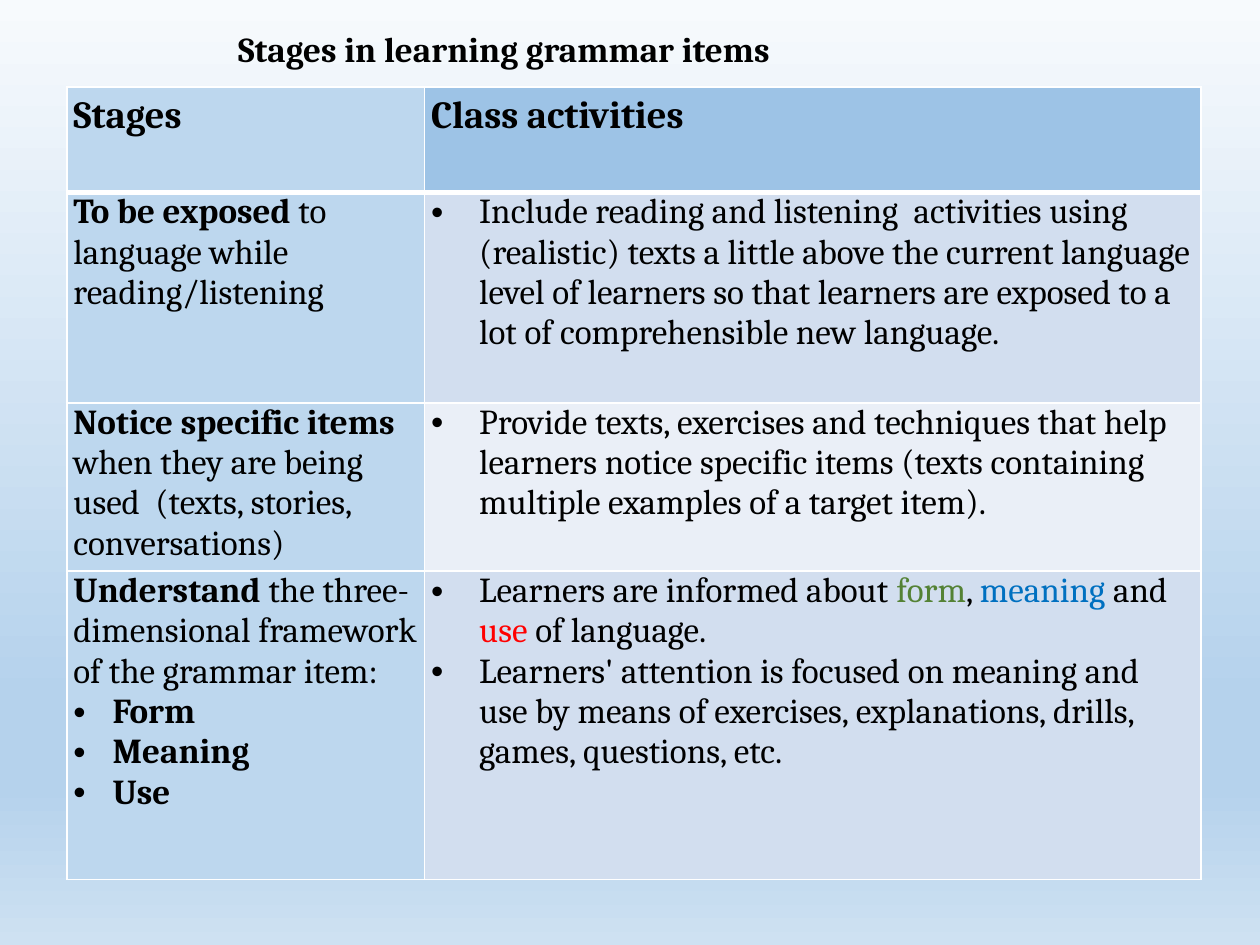
import copy
from dataclasses import dataclass

import lxml.etree
import pptx
import pptx.dml.color
import pptx.enum.text
import pptx.oxml.ns
import pptx.util

Cm = pptx.util.Cm
qn = pptx.oxml.ns.qn

COLORS = {
    "text": "000000",
    "border": "FFFFFF",
    "stage": "BDD7EE",
    "activity_header": "9DC3E6",
    "band_dark": "D2DEEF",
    "band_light": "EAEFF7",
    "form": "548235",
    "meaning": "0070C0",
    "use": "FF0000",
}
BACKGROUND_STOPS = [(0, "F7FAFD"), (74, "B5D2EC"), (83, "B5D2EC"), (100, "CEE1F2")]
CELL_FORMAT = {
    "margin_left": Cm(0.13),
    "margin_right": Cm(0.13),
    "margin_top": 0,
    "margin_bottom": 0,
}
COLUMN_WIDTHS = [7.21, 15.65]
ROW_HEIGHTS = [2.13, 4.24, 3.38, 6.22]


@dataclass
class Run:
    text: str
    bold: bool = False
    color: str = "text"


@dataclass
class Paragraph:
    runs: list[Run]
    indent: float = 0
    size: int = 20
    line_spacing: float = 1.0


@dataclass
class Entry:
    fill: str
    paragraphs: list[Paragraph]


def heading(text: str) -> Paragraph:
    return Paragraph([Run(text, True)], size=22, line_spacing=1.15)


def stage(name: str, description: str) -> Paragraph:
    return Paragraph([Run(name, True), Run(description)])


def activity(*runs: Run) -> Paragraph:
    return Paragraph(list(runs), indent=0.97)


GRID = [
    [
        Entry("stage", [heading("Stages")]),
        Entry("activity_header", [heading("Class activities")]),
    ],
    [
        Entry("stage", [stage("To be exposed ", "to language while reading/listening")]),
        Entry("band_dark", [activity(Run(
            "Include reading and listening  activities using (realistic) texts a little "
            "above the current language level of learners so that learners are exposed "
            "to a lot of comprehensible new language."))]),
    ],
    [
        Entry("stage", [stage(
            "Notice specific items ",
            "when they are being used  (texts, stories, conversations)")]),
        Entry("band_light", [activity(Run(
            "Provide texts, exercises and techniques that help learners notice specific "
            "items (texts containing multiple examples of a target item)."))]),
    ],
    [
        Entry("stage", [
            stage("Understand ", "the three-dimensional framework of the grammar item:"),
            *[Paragraph([Run(dimension, True)], indent=0.79)
              for dimension in ("Form", "Meaning", "Use")],
        ]),
        Entry("band_dark", [
            activity(
                Run("Learners are informed about "),
                Run("form", color="form"),
                Run(", "),
                Run("meaning", color="meaning"),
                Run(" and "),
                Run("use", color="use"),
                Run(" of language."),
            ),
            activity(Run(
                "Learners' attention is focused on meaning and use by means of "
                "exercises, explanations, drills, games, questions, etc.")),
        ]),
    ],
]


def rgb(name: str) -> pptx.dml.color.RGBColor:
    return pptx.dml.color.RGBColor.from_string(COLORS[name])


def apply_format(target, values: dict) -> None:
    for attribute, value in values.items():
        setattr(target, attribute, value)


def write_paragraphs(frame, paragraphs: list[Paragraph]) -> None:
    for index, content in enumerate(paragraphs):
        line = frame.add_paragraph() if index else frame.paragraphs[0]
        line.line_spacing = content.line_spacing
        if content.indent:
            properties = line._p.get_or_add_pPr()
            properties.set("marL", str(Cm(content.indent)))
            properties.set("indent", str(-Cm(content.indent)))
            lxml.etree.SubElement(properties, qn("a:buFont"), typeface="Arial")
            lxml.etree.SubElement(properties, qn("a:buChar"), char="•")
        for part in content.runs:
            words = line.add_run()
            words.text = part.text
            apply_format(words.font, {
                "name": "Cambria",
                "size": pptx.util.Pt(content.size),
                "bold": part.bold,
            })
            words.font.color.rgb = rgb(part.color)


def add_borders(cell, bottom_width: int) -> None:
    properties = cell._tc.get_or_add_tcPr()
    widths = {"lnL": 1, "lnR": 1, "lnT": 1, "lnB": bottom_width}
    for position, (side, width) in enumerate(widths.items()):
        border = lxml.etree.Element(qn(f"a:{side}"), w=str(pptx.util.Pt(width)))
        solid = lxml.etree.SubElement(border, qn("a:solidFill"))
        lxml.etree.SubElement(solid, qn("a:srgbClr"), val=COLORS["border"])
        properties.insert(position, border)


def paint_background(slide) -> None:
    fill = slide.background.fill
    fill.gradient()
    fill.gradient_angle = 270
    stops = slide.element.xpath(".//a:gsLst")[0]
    template = copy.deepcopy(stops[0])
    for stop in list(stops):
        stops.remove(stop)
    for percent, color in BACKGROUND_STOPS:
        stop = copy.deepcopy(template)
        stop.set("pos", str(percent * 1000))
        for child in list(stop):
            stop.remove(child)
        lxml.etree.SubElement(stop, qn("a:srgbClr"), val=color)
        stops.append(stop)


def add_title(slide) -> None:
    title = slide.shapes.add_textbox(Cm(4.55), Cm(0.43), Cm(11.53), Cm(1.11))
    title.text_frame.word_wrap = False
    title.text_frame.auto_size = pptx.enum.text.MSO_AUTO_SIZE.SHAPE_TO_FIT_TEXT
    write_paragraphs(
        title.text_frame, [Paragraph([Run("Stages in learning grammar items", True)])])


def add_stage_table(slide) -> None:
    table = slide.shapes.add_table(
        len(ROW_HEIGHTS), len(COLUMN_WIDTHS), Cm(1.35), Cm(1.75),
        Cm(sum(COLUMN_WIDTHS)), Cm(sum(ROW_HEIGHTS))).table
    for column, width in zip(table.columns, COLUMN_WIDTHS):
        column.width = Cm(width)
    for row, height in zip(table.rows, ROW_HEIGHTS):
        row.height = Cm(height)
    for row_index, entries in enumerate(GRID):
        for column_index, entry in enumerate(entries):
            cell = table.cell(row_index, column_index)
            apply_format(cell, CELL_FORMAT)
            cell.fill.solid()
            cell.fill.fore_color.rgb = rgb(entry.fill)
            add_borders(cell, 1 if row_index else 3)
            write_paragraphs(cell.text_frame, entry.paragraphs)


def main() -> None:
    deck = pptx.Presentation()
    apply_format(deck, {"slide_width": Cm(25.4), "slide_height": Cm(19.05)})
    slide = deck.slides.add_slide(deck.slide_layouts[6])
    paint_background(slide)
    add_title(slide)
    add_stage_table(slide)
    deck.save("out.pptx")


if __name__ == "__main__":
    main()
